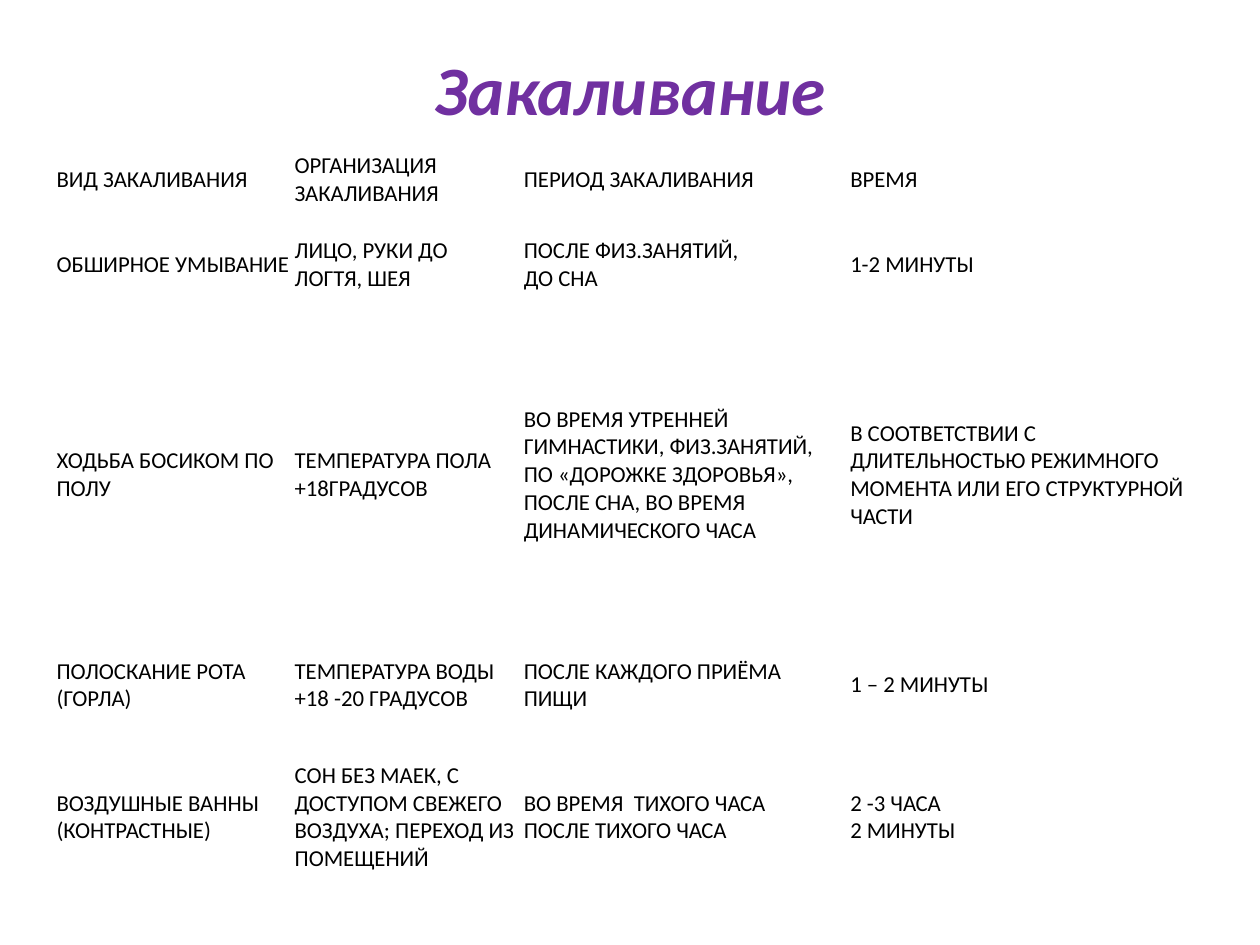
from pptx import Presentation
from pptx.dml.color import RGBColor as Rgb
from pptx.enum.text import MSO_ANCHOR as Anchor, MSO_AUTO_SIZE as Fit, PP_ALIGN as Align
from pptx.util import Cm, Pt

HUES = {"title": "7030A0", "text": "000000"}
FONT = "Calibri"
COLS = [4.8, 4.62, 6.58, 7.01]
ROWS = [1.4, 2.03, 6.45, 2.03, 3.3]
CELLS = [
    ["ВИД ЗАКАЛИВАНИЯ", "ОРГАНИЗАЦИЯ ЗАКАЛИВАНИЯ", "ПЕРИОД ЗАКАЛИВАНИЯ", "ВРЕМЯ"],
    ["ОБШИРНОЕ УМЫВАНИЕ", "ЛИЦО, РУКИ ДО ЛОГТЯ, ШЕЯ",
     "ПОСЛЕ ФИЗ.ЗАНЯТИЙ,\nДО СНА", "1-2 МИНУТЫ"],
    ["ХОДЬБА БОСИКОМ ПО ПОЛУ", "ТЕМПЕРАТУРА ПОЛА +18ГРАДУСОВ",
     "ВО ВРЕМЯ УТРЕННЕЙ ГИМНАСТИКИ, ФИЗ.ЗАНЯТИЙ, ПО «ДОРОЖКЕ ЗДОРОВЬЯ», "
     "ПОСЛЕ СНА, ВО ВРЕМЯ ДИНАМИЧЕСКОГО ЧАСА",
     "В СООТВЕТСТВИИ С ДЛИТЕЛЬНОСТЬЮ РЕЖИМНОГО МОМЕНТА ИЛИ ЕГО СТРУКТУРНОЙ ЧАСТИ"],
    ["ПОЛОСКАНИЕ РОТА (ГОРЛА)", "ТЕМПЕРАТУРА ВОДЫ +18 -20 ГРАДУСОВ",
     "ПОСЛЕ КАЖДОГО ПРИЁМА ПИЩИ", "1 – 2 МИНУТЫ"],
    ["ВОЗДУШНЫЕ ВАННЫ\n(КОНТРАСТНЫЕ)",
     "СОН БЕЗ МАЕК, С ДОСТУПОМ СВЕЖЕГО ВОЗДУХА; ПЕРЕХОД ИЗ ПОМЕЩЕНИЙ",
     "ВО ВРЕМЯ  ТИХОГО ЧАСА\nПОСЛЕ ТИХОГО ЧАСА", "2 -3 ЧАСА\n2 МИНУТЫ"],
]


def write(frame, text, size=13, hue="text", bold=False, italic=False, align=Align.LEFT):
    frame.text = text
    for para in frame.paragraphs:
        para.alignment = align
        for run in para.runs:
            font = run.font
            font.name, font.size = FONT, Pt(size)
            font.bold, font.italic = bold, italic
            font.color.rgb = Rgb.from_string(HUES[hue])


def add_title(slide, left, top, width, height):
    title = slide.shapes.title
    title.left, title.top = Cm(left), Cm(top)
    title.width, title.height = Cm(width), Cm(height)
    frame = title.text_frame
    frame.word_wrap, frame.auto_size = True, Fit.NONE
    frame.vertical_anchor = Anchor.MIDDLE
    write(frame, "Закаливание", size=39.6, hue="title",
          bold=True, italic=True, align=Align.CENTER)


def add_grid(slide, left, top):
    shape = slide.shapes.add_table(len(ROWS), len(COLS), Cm(left), Cm(top),
                                   Cm(sum(COLS)), Cm(sum(ROWS)))
    table = shape.table
    table.first_row = table.horz_banding = False
    for col, width in zip(table.columns, COLS):
        col.width = Cm(width)
    for row, height, texts in zip(table.rows, ROWS, CELLS):
        row.height = Cm(height)
        for cell, text in zip(row.cells, texts):
            cell.fill.background()
            cell.vertical_anchor = Anchor.MIDDLE
            cell.margin_left = cell.margin_right = Cm(0.05)
            cell.margin_top = cell.margin_bottom = Cm(0.05)
            write(cell.text_frame, text)


def main():
    deck = Presentation()
    deck.slide_width, deck.slide_height = Cm(25.4), Cm(19.05)
    slide = deck.slides.add_slide(deck.slide_layouts[5])
    add_title(slide, 1.27, 0.76, 22.86, 2.01)
    add_grid(slide, 1.09, 2.92)
    deck.save("out.pptx")


if __name__ == "__main__":
    main()
